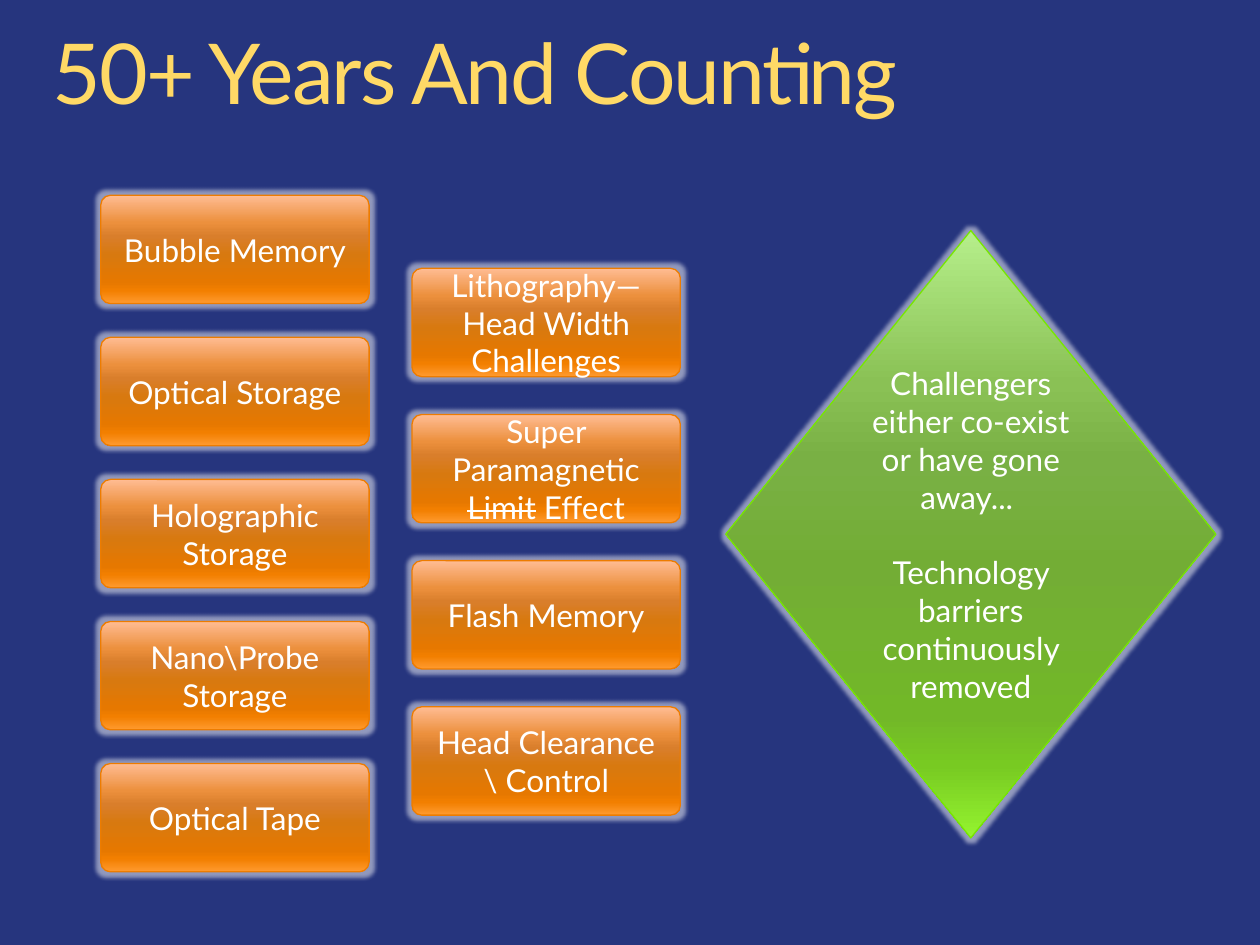
from lxml.etree import SubElement as Sub
from pptx import Presentation
from pptx.dml.color import RGBColor
from pptx.enum.shapes import MSO_SHAPE as Kind
from pptx.enum.text import MSO_ANCHOR as Anchor, MSO_AUTO_SIZE as Auto, PP_ALIGN as Align
from pptx.oxml.ns import qn
from pptx.util import Inches, Pt

FACE = "Lato"
STOPS = (0, 25, 38, 55, 80, 88, 100)
ORANGE = tuple(zip(STOPS, ("FFBC93", "EC903D", "D97E2B", "D8790F", "E67800", "F27F00", "FF9A2E")))
GREEN = tuple(zip(STOPS, ("B6EF8B", "8AC155", "79B044", "73AD35", "72B828", "78CA22", "94F32F")))
GOLD = ((0, "FFF2CC"), (41, "FFD966"), (100, "FFC000"))

RIVALS = ("Bubble Memory", "Optical Storage", "Holographic Storage",
          "Nano\\Probe Storage", "Optical Tape")
LIMITS = ("Lithography—Head Width Challenges", "Super Paramagnetic ",
          "Flash Memory", "Head Clearance \\ Control")
VERDICT = ("Challengers either co-exist or have gone away... \n"
           "Technology barriers continuously removed")


def color(code):
    """Turn a hex string into a colour."""
    return RGBColor.from_string(code)


def fade(fill, stops):
    """Give a fill a top-to-bottom gradient of (percent, colour) stops."""
    fill.gradient()
    fill.gradient_angle = 270
    rail = fill._fill._gradFill.find(qn("a:gsLst"))
    for old in list(rail):
        rail.remove(old)
    for place, code in stops:
        stop = Sub(rail, qn("a:gs"), pos=str(place * 1000))
        Sub(stop, qn("a:srgbClr"), val=code)


def glow(shape):
    """Swap the shadow of a shape for a soft white halo."""
    shape.shadow.inherit = False
    halo = Sub(shape._element.spPr.find(qn("a:effectLst")), qn("a:glow"), rad="63500")
    tint = Sub(halo, qn("a:srgbClr"), val="FFFFFF")
    Sub(tint, qn("a:alpha"), val="50000")


def style(run):
    """Set the body font on a run."""
    run.font.name, run.font.size = FACE, Pt(18)
    run.font.color.rgb = color("FFFFFF")


def add_block(slide, kind, spot, text, stops, edge):
    """Add a glowing gradient shape with centred text."""
    shape = slide.shapes.add_shape(kind, *map(Inches, spot))
    fade(shape.fill, stops)
    shape.line.color.rgb = color(edge)
    shape.line.width = Pt(0.75)
    glow(shape)
    frame = shape.text_frame
    frame.word_wrap = True
    frame.vertical_anchor = Anchor.MIDDLE
    frame.text = text
    for para in frame.paragraphs:
        para.alignment = Align.CENTER
        for run in para.runs:
            style(run)
    return shape


def add_stack(slide, left, top, last, labels):
    """Add a column of evenly spaced orange cards."""
    step = (last - top) / (len(labels) - 1)
    cards = []
    for row, label in enumerate(labels):
        spot = (left, top + row * step, 2.13, 0.86)
        card = add_block(slide, Kind.ROUNDED_RECTANGLE, spot, label, ORANGE, "ED7C00")
        card.adjustments[0] = 0.09
        cards.append(card)
    return cards


def strike_limit(card):
    """Finish the card label with a struck word and its successor."""
    para = card.text_frame.paragraphs[0]
    for text, mark in (("Limit", "sngStrike"), (" Effect", "noStrike")):
        run = para.add_run()
        run.text = text
        style(run)
        run._r.get_or_add_rPr().set("strike", mark)


def add_title(slide, text):
    """Add the golden slide title."""
    box = slide.shapes.add_textbox(Inches(0.42), Inches(0.25), Inches(9.16), Inches(0.73))
    frame = box.text_frame
    frame.word_wrap = True
    frame.auto_size = Auto.SHAPE_TO_FIT_TEXT
    frame.margin_left = frame.margin_right = frame.margin_top = frame.margin_bottom = 0
    frame.text = text
    para = frame.paragraphs[0]
    para.line_spacing = 0.9
    run = para.runs[0]
    run.font.name, run.font.size = FACE, Pt(48)
    fade(run.font.fill, GOLD)
    run._r.get_or_add_rPr().set("spc", "-120")


def main():
    """Build and save the slide."""
    deck = Presentation()
    deck.slide_width, deck.slide_height = Inches(10), Inches(7.5)
    slide = deck.slides.add_slide(deck.slide_layouts[6])
    slide.background.fill.solid()
    slide.background.fill.fore_color.rgb = color("26357E")
    add_title(slide, "50+ Years And Counting")
    add_stack(slide, 0.8, 1.55, 6.06, RIVALS)
    limits = add_stack(slide, 3.27, 2.13, 5.61, LIMITS)
    strike_limit(limits[1])
    verdict = add_block(slide, Kind.DIAMOND, (5.76, 1.83, 3.89, 4.82), VERDICT, GREEN, "77E700")
    verdict.text_frame.paragraphs[1].space_before = Pt(21.6)
    deck.save("out.pptx")


if __name__ == "__main__":
    main()
